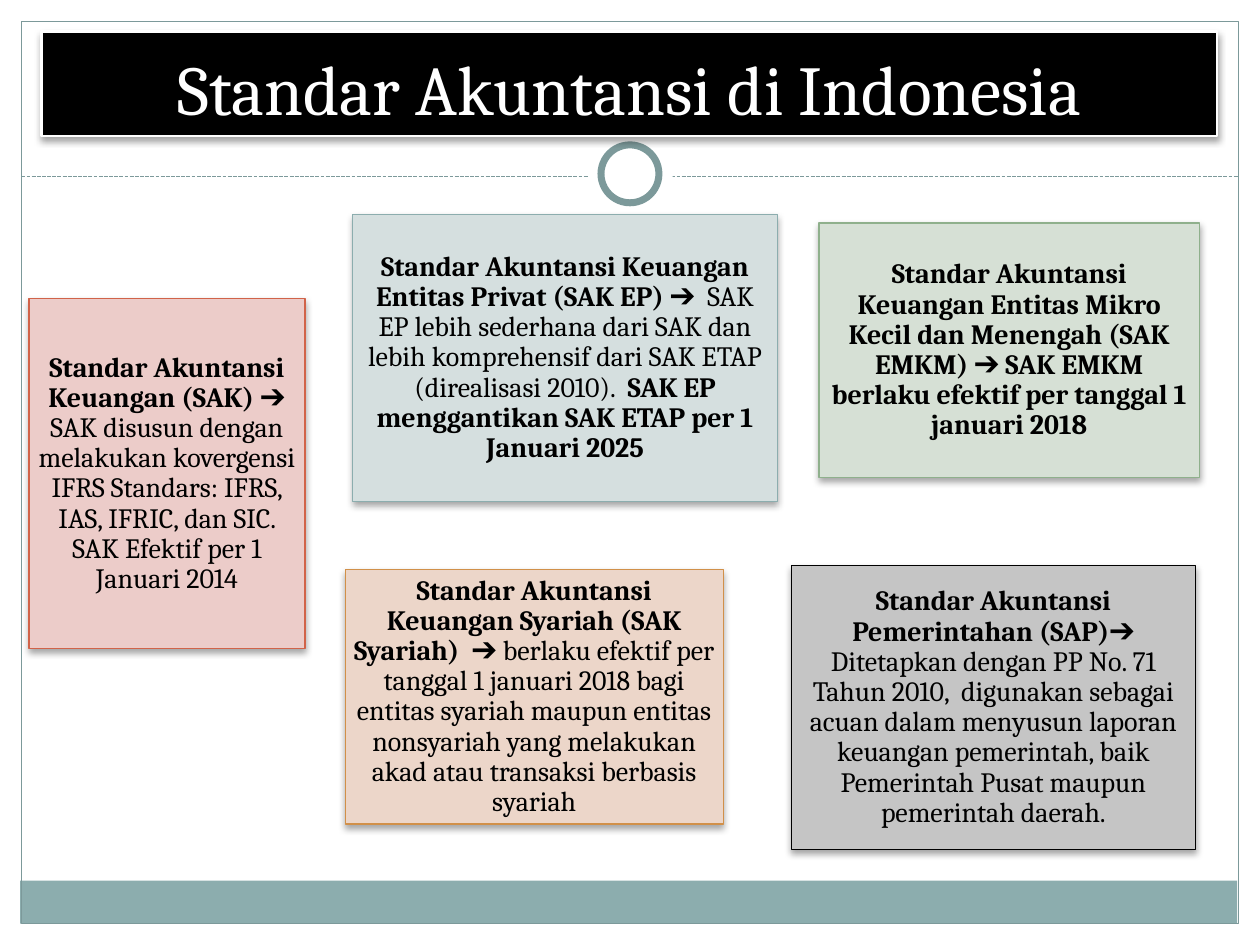
from lxml.etree import SubElement
from pptx import Presentation
from pptx.dml.color import RGBColor
from pptx.enum.dml import MSO_LINE_DASH_STYLE as Dash
from pptx.enum.shapes import MSO_CONNECTOR as Connector, MSO_SHAPE as Shape
from pptx.enum.text import MSO_ANCHOR as Anchor, MSO_AUTO_SIZE as AutoSize, PP_ALIGN as Align
from pptx.oxml import parse_xml
from pptx.oxml.ns import nsdecls, qn
from pptx.util import Inches, Pt

FONT = "Cambria"
COLORS = {
    "white": "FFFFFF", "black": "000000", "frame": "7C999A", "band": "8CADAE",
    "red": "D16349", "red_tint": "ECCCC9",
    "teal": "8CADAE", "teal_tint": "D5DFDF",
    "green": "8FB08C", "green_tint": "D6E0D5",
    "orange": "D19049", "orange_tint": "ECD6C9",
    "black_tint": "C5C5C5",
}

# Each card: position and size, colour name, (text, bold) spans
CARDS = [
    ((0.23, 2.37, 2.19, 2.78), "red", [
        ("Standar Akuntansi Keuangan (SAK) ➔ ", True),
        ("SAK disusun dengan melakukan kovergensi IFRS Standars: IFRS, IAS, IFRIC, "
         "dan SIC. SAK Efektif per 1 Januari 2014", False)]),
    ((2.8, 1.7, 3.37, 2.28), "teal", [
        ("Standar Akuntansi Keuangan Entitas Privat (SAK EP) ➔  ", True),
        ("SAK EP lebih sederhana dari SAK dan lebih komprehensif dari SAK ETAP "
         "(direalisasi 2010).  ", False),
        ("SAK EP menggantikan SAK ETAP per 1 Januari 2025", True)]),
    ((6.5, 1.77, 3.02, 2.02), "green", [
        ("Standar Akuntansi Keuangan Entitas Mikro Kecil dan Menengah (SAK EMKM) ➔ "
         "SAK EMKM berlaku efektif per tanggal 1 januari 2018", True)]),
    ((2.74, 4.52, 3, 2.02), "orange", [
        ("Standar Akuntansi Keuangan Syariah (SAK Syariah)  ➔ ", True),
        ("berlaku efektif per tanggal 1 januari 2018 bagi entitas syariah maupun "
         "entitas nonsyariah yang melakukan akad atau transaksi berbasis syariah", False)]),
    ((6.28, 4.49, 3.21, 2.25), "black", [
        ("Standar Akuntansi Pemerintahan (SAP)", True),
        ("➔ Ditetapkan dengan PP No. 71 Tahun 2010,  digunakan sebagai acuan dalam "
         "menyusun laporan keuangan pemerintah, baik Pemerintah Pusat maupun "
         "pemerintah daerah.", False)]),
]


def color(name):
    return RGBColor.from_string(COLORS[name])


def paint(shape, fill=None, line=None, width=0.75):
    if fill:
        shape.fill.solid()
        shape.fill.fore_color.rgb = color(fill)
    else:
        shape.fill.background()
    if line:
        shape.line.color.rgb = color(line)
        shape.line.width = Pt(width)
    else:
        shape.line.fill.background()


def add_shape(page, kind, frame, **style):
    shape = page.shapes.add_shape(kind, *map(Inches, frame))
    shape.shadow.inherit = False
    paint(shape, **style)
    return shape


def add_shadow(shape):
    shape.shadow.inherit = False
    effects = shape._element.spPr.find(qn("a:effectLst"))
    effects.append(parse_xml(
        f'<a:outerShdw {nsdecls("a")} blurRad="{Pt(4)}" dist="{Pt(2)}" '
        'dir="5400000" rotWithShape="0"><a:srgbClr val="000000">'
        '<a:alpha val="35000"/></a:srgbClr></a:outerShdw>'))


def add_span(para, text, size, ink, bold=False):
    span = para.add_run()
    span.text = text
    span.font.name = FONT
    span.font.size = Pt(size)
    span.font.bold = bold
    span.font.color.rgb = color(ink)


def add_divider(page):
    line = page.shapes.add_connector(
        Connector.STRAIGHT, Inches(0.17), Inches(1.4), Inches(9.83), Inches(1.4))
    line.line.color.rgb = color("frame")
    line.line.width = Pt(0.75)
    line.line.dash_style = Dash.SQUARE_DOT
    SubElement(line._element.spPr, qn("a:effectLst"))


def add_title(page, text):
    title = page.shapes.title
    # Bring the title in front of the decoration
    page.shapes._spTree.append(title._element)
    title.left, title.top, title.width, title.height = map(Inches, (0.33, 0.25, 9.33, 0.83))
    paint(title, fill="black", line="white", width=1.57)
    add_shadow(title)
    frame = title.text_frame
    frame.auto_size = AutoSize.NONE
    frame.vertical_anchor = Anchor.BOTTOM
    para = frame.paragraphs[0]
    para.alignment = Align.CENTER
    add_span(para, text, 40, "white")


def add_card(page, place, hue, spans):
    card = add_shape(page, Shape.RECTANGLE, place, fill=hue + "_tint", line=hue)
    add_shadow(card)
    frame = card.text_frame
    frame.word_wrap = True
    frame.vertical_anchor = Anchor.MIDDLE
    frame.margin_left = frame.margin_right = Inches(0.07)
    frame.margin_top = frame.margin_bottom = Inches(0.07)
    para = frame.paragraphs[0]
    para.alignment = Align.CENTER
    para.line_spacing = 0.9
    for text, bold in spans:
        add_span(para, text, 16, "black", bold)


def main():
    deck = Presentation()
    deck.slide_width, deck.slide_height = Inches(10), Inches(7.5)
    page = deck.slides.add_slide(deck.slide_layouts[5])

    # Frame, bottom band and divider with its ring
    add_shape(page, Shape.RECTANGLE, (0.16, 6.99, 9.66, 0.34), fill="band")
    add_shape(page, Shape.RECTANGLE, (0.17, 0.17, 9.66, 7.16), line="frame")
    add_divider(page)
    add_shape(page, Shape.OVAL, (4.67, 1.05, 0.67, 0.67), fill="white")
    add_shape(page, Shape.OVAL, (4.77, 1.15, 0.46, 0.46), fill="white", line="frame", width=4)

    # Title and the five standards
    add_title(page, "Standar Akuntansi di Indonesia")
    for card in CARDS:
        add_card(page, *card)

    deck.save("out.pptx")


if __name__ == "__main__":
    main()
